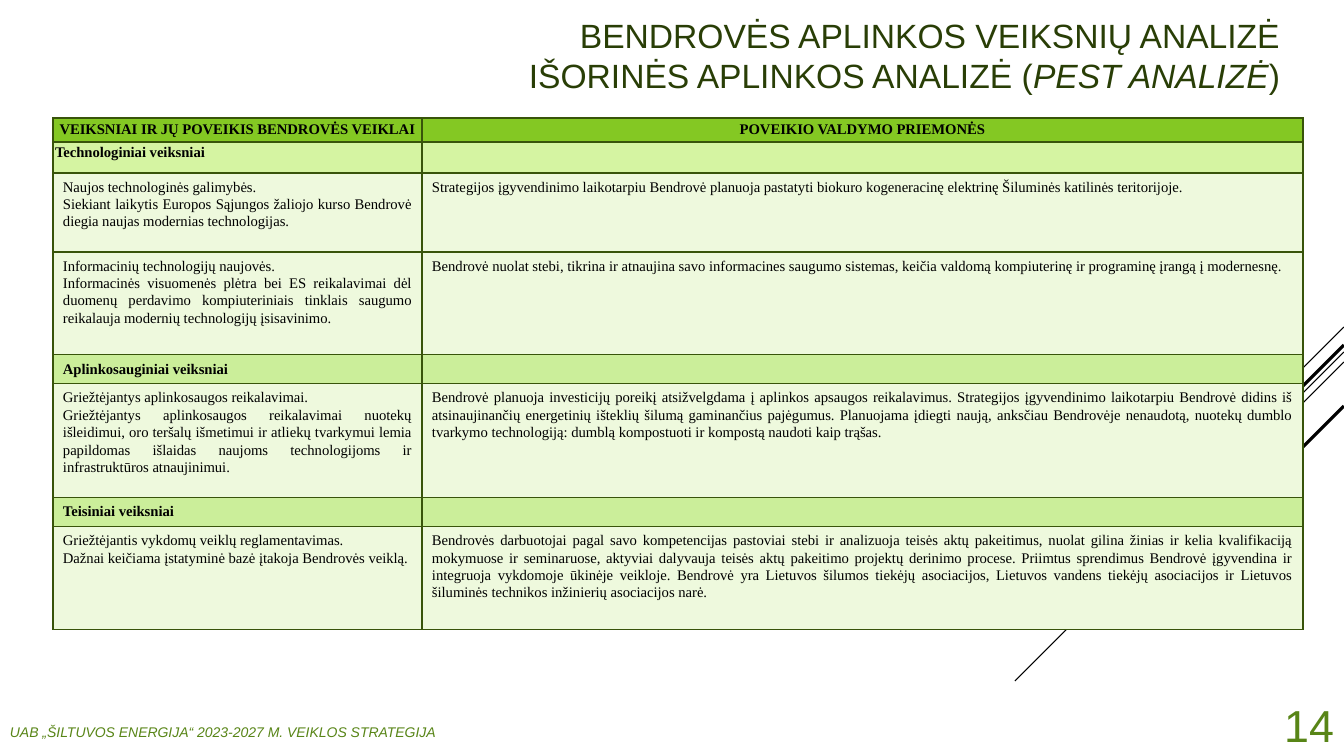
from lxml import etree
from pptx import Presentation
from pptx import util as u
from pptx.dml.color import RGBColor
from pptx.enum import shapes, text
from pptx.oxml.ns import qn

WIDTH, HEIGHT = 1344, 756
BLACK = RGBColor(0x00, 0x00, 0x00)
TITLE_GREEN = RGBColor(0x29, 0x3E, 0x06)
FOOTER_GREEN = RGBColor(0x58, 0x85, 0x17)
HEADER_FILL = RGBColor(0x84, 0xC8, 0x23)
FIRST_GROUP_FILL = RGBColor(0xD5, 0xF4, 0xA2)
GROUP_FILL = RGBColor(0xCB, 0xEE, 0x9A)
BODY_FILL = RGBColor(0xEE, 0xF9, 0xDD)
BORDER = RGBColor(0x38, 0x54, 0x0A)

# Right end (x, y), horizontal run to the lower left, line width in points
DIAGONALS = [(1344, 327, 101, 0.75), (1344, 352, 329, 0.75), (1344, 362, 209, 0.75),
             (1344, 345, 193, 2.25), (1344, 406, 140, 2.25)]

COLUMNS = [369, 881]
# Cell insets as (horizontal, vertical)
HEADER_INSET, TIGHT_INSET, BODY_INSET = (3, 2), (2, 1), (10, 5)

# Row height, fill, bold, inset of first cell, inset of second cell, paragraphs of each cell
ROWS = [
    (24, HEADER_FILL, True, HEADER_INSET, HEADER_INSET,
     ["VEIKSNIAI IR JŲ POVEIKIS BENDROVĖS VEIKLAI"], ["POVEIKIO VALDYMO PRIEMONĖS"]),
    (31, FIRST_GROUP_FILL, True, TIGHT_INSET, BODY_INSET, ["Technologiniai veiksniai"], [""]),
    (79, BODY_FILL, False, BODY_INSET, BODY_INSET,
     ["Naujos technologinės galimybės.",
      "Siekiant laikytis Europos Sąjungos žaliojo kurso Bendrovė diegia naujas modernias "
      "technologijas."],
     ["Strategijos įgyvendinimo laikotarpiu Bendrovė planuoja pastatyti biokuro kogeneracinę "
      "elektrinę Šiluminės katilinės teritorijoje."]),
    (103, BODY_FILL, False, BODY_INSET, BODY_INSET,
     ["Informacinių technologijų naujovės.",
      "Informacinės visuomenės plėtra bei ES reikalavimai dėl duomenų perdavimo "
      "kompiuteriniais tinklais saugumo reikalauja modernių technologijų įsisavinimo."],
     ["Bendrovė nuolat stebi, tikrina ir atnaujina savo informacines saugumo sistemas, keičia "
      "valdomą kompiuterinę ir programinę įrangą į modernesnę."]),
    (28, GROUP_FILL, True, BODY_INSET, BODY_INSET, ["Aplinkosauginiai veiksniai"], [""]),
    (114, BODY_FILL, False, BODY_INSET, BODY_INSET,
     ["Griežtėjantys aplinkosaugos reikalavimai.",
      "Griežtėjantys aplinkosaugos reikalavimai nuotekų išleidimui, oro teršalų išmetimui ir "
      "atliekų tvarkymui lemia papildomas išlaidas naujoms technologijoms ir infrastruktūros "
      "atnaujinimui."],
     ["Bendrovė planuoja investicijų poreikį atsižvelgdama į aplinkos apsaugos reikalavimus. "
      "Strategijos įgyvendinimo laikotarpiu Bendrovė didins iš atsinaujinančių energetinių "
      "išteklių šilumą gaminančius pajėgumus. Planuojama įdiegti naują, anksčiau Bendrovėje "
      "nenaudotą, nuotekų dumblo tvarkymo technologiją: dumblą kompostuoti ir kompostą naudoti "
      "kaip trąšas."]),
    (28, GROUP_FILL, True, BODY_INSET, BODY_INSET, ["Teisiniai veiksniai"], [""]),
    (103, BODY_FILL, False, BODY_INSET, BODY_INSET,
     ["Griežtėjantis vykdomų veiklų reglamentavimas.",
      "Dažnai keičiama įstatyminė bazė įtakoja Bendrovės veiklą."],
     ["Bendrovės darbuotojai pagal savo kompetencijas pastoviai stebi ir analizuoja teisės aktų "
      "pakeitimus, nuolat gilina žinias ir kelia kvalifikaciją mokymuose ir seminaruose, "
      "aktyviai dalyvauja teisės aktų pakeitimo projektų derinimo procese. Priimtus sprendimus "
      "Bendrovė įgyvendina ir integruoja vykdomoje ūkinėje veikloje. Bendrovė yra Lietuvos "
      "šilumos tiekėjų asociacijos, Lietuvos vandens tiekėjų asociacijos ir Lietuvos šiluminės "
      "technikos inžinierių asociacijos narė."]),
]


def px(length):
    return u.Emu(round(length * 914400 / 100.8))


def add_span(para, words, font, size, color, bold=False, italic=False):
    span = para.add_run()
    span.text = words
    span.font.name, span.font.size = font, u.Pt(size)
    span.font.bold, span.font.italic = bold, italic
    span.font.color.rgb = color


def add_text_box(page, box, anchor, align):
    frame = page.shapes.add_textbox(*map(px, box)).text_frame
    frame.word_wrap = True
    frame.vertical_anchor = anchor
    frame.paragraphs[0].alignment = align
    return frame.paragraphs[0]


def add_diagonals(page):
    for x, y, run, width in DIAGONALS:
        line = page.shapes.add_connector(shapes.MSO_CONNECTOR.STRAIGHT,
                                         px(x), px(y), px(x - run), px(y + run))
        line.line.color.rgb = BLACK
        line.line.width = u.Pt(width)
        etree.SubElement(line._element.spPr, qn("a:effectLst"))


def add_title(page, box):
    para = add_text_box(page, box, text.MSO_ANCHOR.MIDDLE, text.PP_ALIGN.RIGHT)
    add_span(para, "BENDROVĖS APLINKOS VEIKSNIŲ ANALIZĖ", "Arial", 24, TITLE_GREEN)
    para.add_line_break()
    add_span(para, "IŠORINĖS APLINKOS ANALIZĖ (", "Arial", 24, TITLE_GREEN)
    add_span(para, "PEST ANALIZĖ", "Arial", 24, TITLE_GREEN, italic=True)
    add_span(para, ")", "Arial", 24, TITLE_GREEN)


def set_borders(cell, bottom_width):
    properties = cell._tc.get_or_add_tcPr()
    for index, side in enumerate("LRTB"):
        width = bottom_width if side == "B" else 1
        edge = etree.Element(qn(f"a:ln{side}"), w=str(u.Pt(width)))
        fill = etree.SubElement(edge, qn("a:solidFill"))
        etree.SubElement(fill, qn("a:srgbClr"), val=str(BORDER))
        properties.insert(index, edge)


def fill_cell(cell, paragraphs, fill, bold, inset, align):
    cell.fill.solid()
    cell.fill.fore_color.rgb = fill
    cell.margin_left = cell.margin_right = px(inset[0])
    cell.margin_top = cell.margin_bottom = px(inset[1])
    for index, words in enumerate(paragraphs):
        frame = cell.text_frame
        para = frame.add_paragraph() if index else frame.paragraphs[0]
        para.alignment = align
        para.line_spacing = 1.07
        if words:
            add_span(para, words, "Times New Roman", 10.5, BLACK, bold)
        else:
            # Keeps an empty cell from stretching its row
            etree.SubElement(para._p, qn("a:endParaRPr"), sz="1050")


def add_factor_table(page, left, top):
    box = (left, top, sum(COLUMNS), sum(row[0] for row in ROWS))
    table = page.shapes.add_table(len(ROWS), len(COLUMNS), *map(px, box)).table
    table.first_row = table.horz_banding = False
    for column, width in zip(table.columns, COLUMNS):
        column.width = px(width)
    for index, (height, fill, bold, inset, second_inset, factors, measures) in enumerate(ROWS):
        table.rows[index].height = px(height)
        align = text.PP_ALIGN.JUSTIFY if index else text.PP_ALIGN.CENTER
        contents = [(factors, inset), (measures, second_inset)]
        for cell, (paragraphs, cell_inset) in zip(table.rows[index].cells, contents):
            fill_cell(cell, paragraphs, fill, bold, cell_inset, align)
            set_borders(cell, 1 if index else 2)


def add_footer(page, box, number_box):
    para = add_text_box(page, box, text.MSO_ANCHOR.TOP, text.PP_ALIGN.LEFT)
    add_span(para, "UAB „ŠILTUVOS ENERGIJA“ 2023-2027 M. VEIKLOS STRATEGIJA",
             "Arial", 10, FOOTER_GREEN, italic=True)
    para = add_text_box(page, number_box, text.MSO_ANCHOR.BOTTOM, text.PP_ALIGN.RIGHT)
    add_span(para, "14", "Arial", 32, FOOTER_GREEN)


def main():
    deck = Presentation()
    deck.slide_width, deck.slide_height = px(WIDTH), px(HEIGHT)
    page = deck.slides.add_slide(deck.slide_layouts[6])
    add_diagonals(page)
    add_title(page, (403, -9, 887, 128))
    add_factor_table(page, 53, 118)
    add_footer(page, (0, 719, 832, 40), (1218, 682, 126, 74))
    deck.save("out.pptx")


if __name__ == "__main__":
    main()
